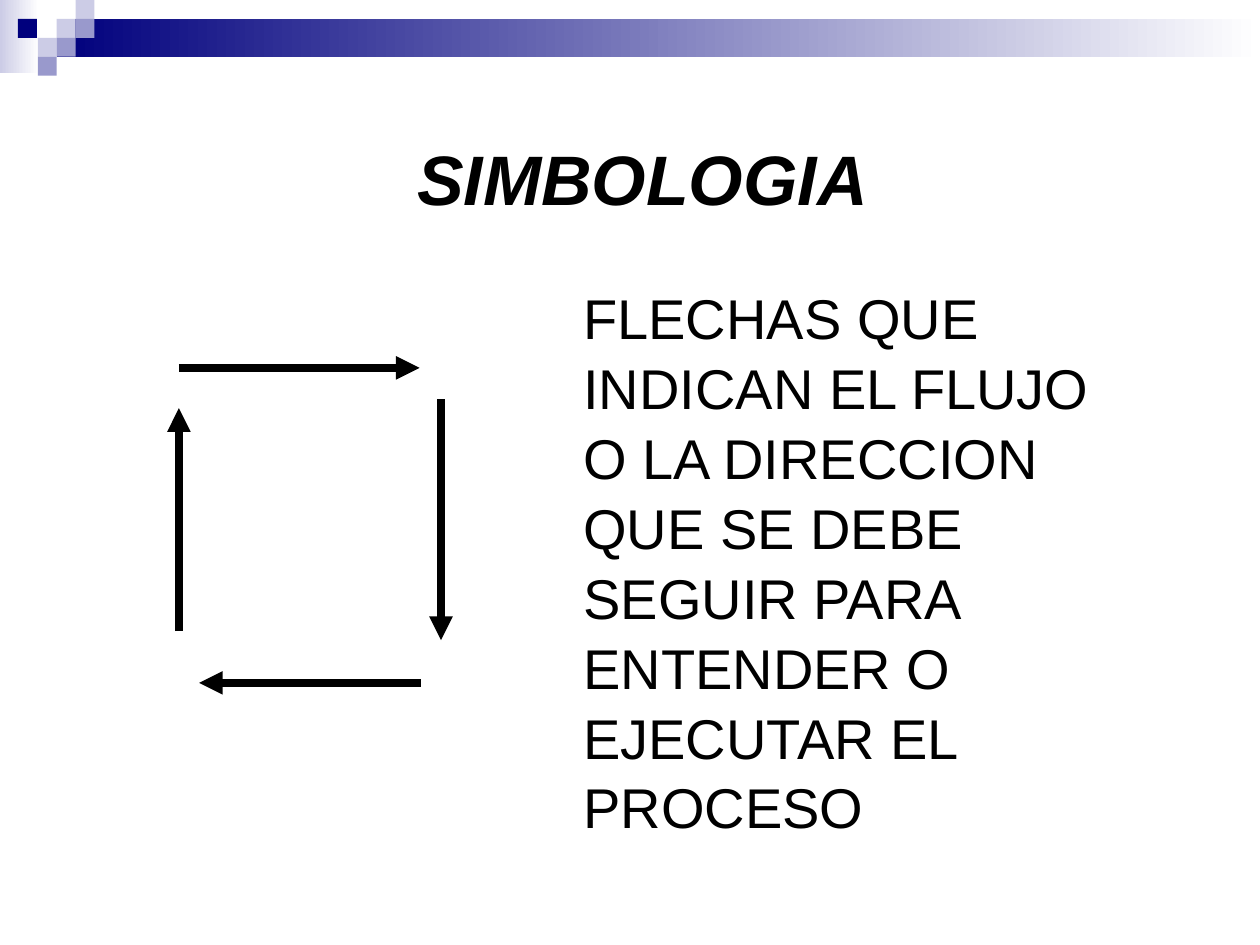
from lxml import etree
from pptx import Presentation
from pptx.dml.color import RGBColor
from pptx.enum import shapes, text
from pptx.oxml import ns
from pptx.util import Inches, Pt

BLACK = RGBColor(0x00, 0x00, 0x00)
WHITE = RGBColor(0xFF, 0xFF, 0xFF)
NAVY = RGBColor(0x00, 0x00, 0x7D)
LAVENDER = RGBColor(0xCC, 0xCC, 0xE6)
PERIWINKLE = RGBColor(0x99, 0x99, 0xCC)
FONT = "Arial"


def add_block(slide, left, top, width, height, color, fade_to=None):
    """Add a borderless rectangle, plain or fading to the right."""
    block = slide.shapes.add_shape(
        shapes.MSO_SHAPE.RECTANGLE, Inches(left), Inches(top), Inches(width), Inches(height))
    block.shadow.inherit = False
    block.line.fill.background()
    if fade_to is None:
        block.fill.solid()
        block.fill.fore_color.rgb = color
    else:
        block.fill.gradient()
        block.fill.gradient_angle = 0
        for stop, stop_color in zip(block.fill.gradient_stops, (color, fade_to)):
            stop.color.rgb = stop_color


def add_header(slide, left, top, width):
    """Draw the fading band and its corner of small tiles."""
    tile = 0.15
    band_left = 3 * tile
    add_block(slide, left, top, 0.31, 0.58, LAVENDER, WHITE)
    add_block(slide, left + band_left, top + tile, width - band_left, 2 * tile, NAVY, WHITE)
    tiles = [
        (3, 1, LAVENDER), (4, 0, LAVENDER), (4, 1, PERIWINKLE), (2, 2, LAVENDER),
        (0.95, 1, NAVY), (3, 2, PERIWINKLE), (2, 3, PERIWINKLE),
    ]
    for column, row, color in tiles:
        add_block(slide, left + column * tile, top + row * tile, tile, tile, color)


def fill_placeholder(placeholder, box, words, size, line_spacing, bold=None, italic=None):
    """Move a placeholder to its box and write one formatted run; return the paragraph."""
    placeholder.left, placeholder.top, placeholder.width, placeholder.height = map(Inches, box)
    frame = placeholder.text_frame
    frame.word_wrap = True
    frame.auto_size = text.MSO_AUTO_SIZE.NONE
    paragraph = frame.paragraphs[0]
    paragraph.line_spacing = line_spacing
    run = paragraph.add_run()
    run.text = words
    run.font.name = FONT
    run.font.size = Pt(size)
    run.font.bold = bold
    run.font.italic = italic
    run.font.color.rgb = BLACK
    return paragraph


def add_title(slide, box):
    """Write the centred heading."""
    heading = fill_placeholder(
        slide.shapes.title, box, "SIMBOLOGIA ", 40, 0.9, bold=True, italic=True)
    heading.alignment = text.PP_ALIGN.CENTER
    slide.shapes.title.text_frame.vertical_anchor = text.MSO_ANCHOR.MIDDLE


def add_explanation(slide, box):
    """Write the meaning of the arrows without a bullet."""
    meaning = fill_placeholder(
        slide.placeholders[1], box,
        "FLECHAS QUE INDICAN EL FLUJO O LA DIRECCION QUE SE DEBE "
        "SEGUIR PARA ENTENDER O EJECUTAR EL PROCESO", 32, 1.04)
    properties = meaning._p.get_or_add_pPr()
    properties.set("marL", "0")
    properties.set("indent", "0")
    etree.SubElement(properties, ns.qn("a:buNone"))


def add_flow_arrows(slide, left, top):
    """Draw four arrows that circle clockwise."""
    arrows = [
        ((0, 0), (1.91, 0)),
        ((2.08, 0.25), (2.08, 2.16)),
        ((1.92, 2.5), (0.16, 2.5)),
        ((0, 2.09), (0, 0.32)),
    ]
    for (start_x, start_y), (end_x, end_y) in arrows:
        arrow = slide.shapes.add_connector(
            shapes.MSO_CONNECTOR.STRAIGHT,
            Inches(left + start_x), Inches(top + start_y),
            Inches(left + end_x), Inches(top + end_y))
        arrow.line.color.rgb = BLACK
        arrow.line.width = Pt(4.5)
        etree.SubElement(arrow.line._get_or_add_ln(), ns.qn("a:tailEnd"), type="triangle")
        etree.SubElement(arrow._element.spPr, ns.qn("a:effectLst"))


def main():
    """Build and save the slide."""
    deck = Presentation()
    deck.slide_width, deck.slide_height = Inches(10), Inches(7.5)
    slide = deck.slides.add_slide(deck.slide_layouts[1])
    slide.background.fill.solid()
    slide.background.fill.fore_color.rgb = WHITE
    add_header(slide, 0, 0, 10)
    add_explanation(slide, (4.53, 2.18, 4.37, 2.72))
    add_title(slide, (1.25, 0.83, 7.83, 1.25))
    add_flow_arrows(slide, 1.42, 2.92)
    deck.save("out.pptx")


if __name__ == "__main__":
    main()
